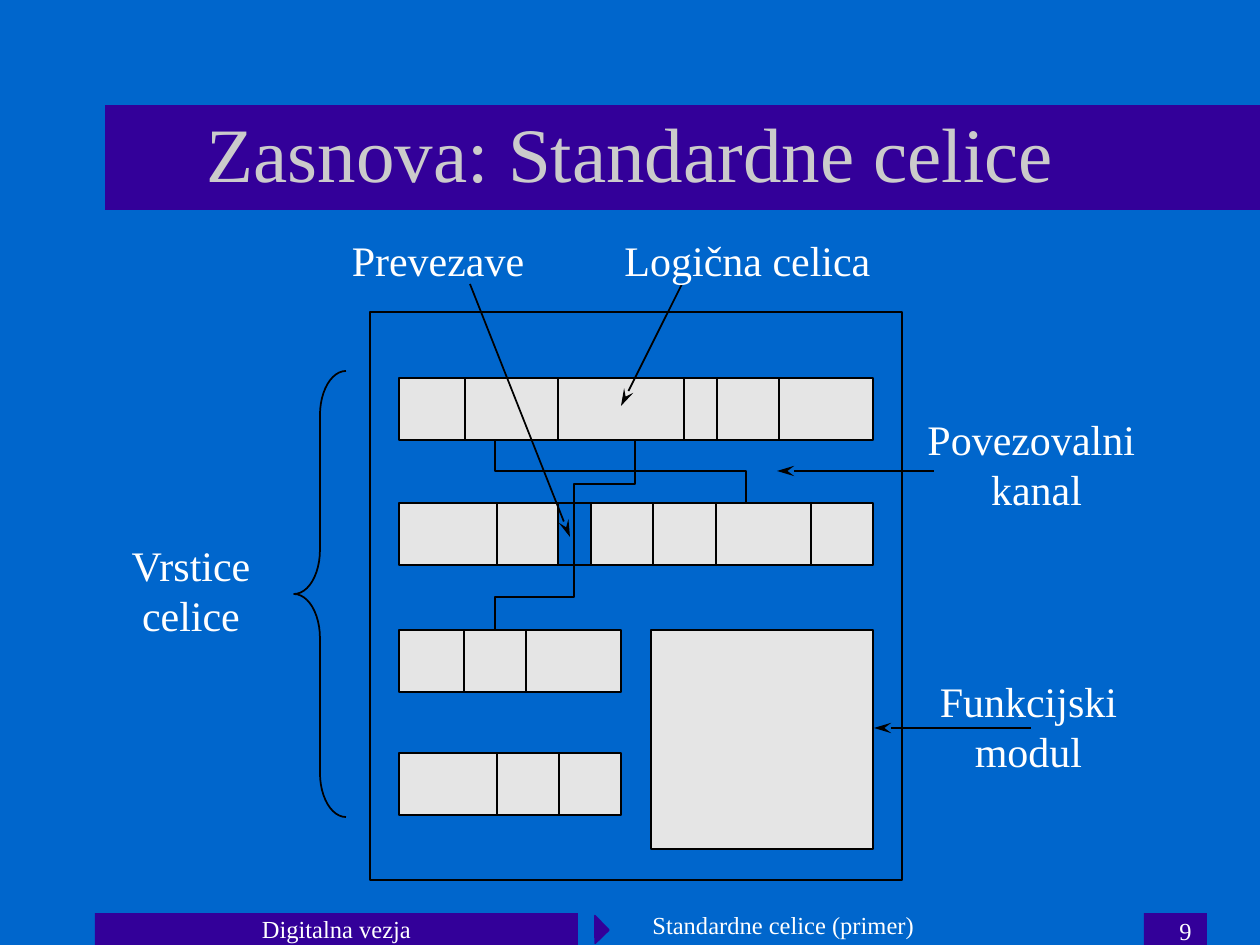
from itertools import pairwise
from pptx import Presentation
from pptx.dml.color import RGBColor
from pptx.enum.shapes import MSO_CONNECTOR as Link, MSO_SHAPE as Kind
from pptx.enum.text import MSO_ANCHOR as Anchor, MSO_AUTO_SIZE as Auto, PP_ALIGN as Align
from pptx.oxml.ns import qn
from pptx.util import Emu, Pt
from lxml.etree import SubElement

SCALE = 914400 / 126
FONT = "Times New Roman"
BACK, BAR, CELL, INK, WHITE, GREY = "0066CC", "330099", "E5E5E5", "000000", "FFFFFF", "CBCBCB"

BARS = [(1144, 913, 63, 32), (95, 913, 483, 32), (105, 105, 1155, 105)]
MARK = (585, 920, 20, 19)
TITLE = ("Zasnova: Standardne celice", (95, 84, 1071, 136))
CHIP = (370, 312, 532, 568)
MODULE = (651, 630, 222, 219)
BRACE = (294, 371, 52, 446)
CELL_H = 62
ROWS = [
    (378, [399, 465, 558, 684, 717, 779, 873]),
    (503, [399, 497, 558, 591, 653, 716, 811, 873]),
    (630, [399, 464, 526, 621]),
    (753, [399, 497, 559, 621]),
]
GAP = (503, 558)
WIRES = [
    [(495, 630), (495, 597), (574, 597), (574, 484), (635, 484), (635, 440)],
    [(495, 440), (495, 471), (746, 471), (746, 503)],
]
ARROWS = [
    ((470, 284), (570, 537)),
    ((682, 284), (621, 406)),
    ((934, 471), (777, 471)),
    ((1031, 728), (874, 728)),
]
LABELS = [
    (["Prevezave"], (339, 228, 198, 63)),
    (["Logična celica"], (612, 228, 271, 63)),
    (["Vrstice", "celice"], (118, 533, 146, 113)),
    (["Povezovalni ", "kanal"], (915, 407, 243, 113)),
    (["Funkcijski", "modul"], (927, 669, 203, 113)),
]
FOOTS = [
    ("9", (942, 910, 262, 32), Align.RIGHT, Anchor.TOP),
    ("Digitalna vezja", (95, 908, 483, 42), Align.CENTER, Anchor.MIDDLE),
    ("Standardne celice (primer)", (640, 904, 483, 42), Align.LEFT, Anchor.MIDDLE),
]


def px(*vals):
    return [Emu(round(v * SCALE)) for v in vals]


def color(code):
    return RGBColor.from_string(code)


def paint(shape, fill=None, line=None):
    shape.shadow.inherit = False
    if fill:
        shape.fill.solid()
        shape.fill.fore_color.rgb = color(fill)
    else:
        shape.fill.background()
    if line:
        shape.line.color.rgb = color(line)
        shape.line.width = Pt(1)
    else:
        shape.line.fill.background()
    return shape


def draw(box, fill=None, line=None, kind=Kind.RECTANGLE):
    return paint(shapes.add_shape(kind, *px(*box)), fill, line)


def write(shape, lines, size=24, ink=WHITE, align=Align.CENTER,
          anchor=Anchor.MIDDLE, wrap=True, fit=Auto.NONE):
    frame = shape.text_frame
    frame.text = "\n".join(lines)
    frame.word_wrap = wrap
    frame.auto_size = fit
    frame.vertical_anchor = anchor
    for para in frame.paragraphs:
        para.alignment = align
        para.font.name = FONT
        para.font.size = Pt(size)
        para.font.color.rgb = color(ink)


def trace(points):
    pen = shapes.build_freeform(*points[0], scale=SCALE)
    pen.add_line_segments(points[1:], close=False)
    paint(pen.convert_to_shape(), line=INK)


def point(start, end):
    arrow = shapes.add_connector(Link.STRAIGHT, *px(*start, *end))
    arrow.line.color.rgb = color(INK)
    arrow.line.width = Pt(1)
    props = arrow._element.spPr
    SubElement(props.find(qn("a:ln")), qn("a:tailEnd"), type="stealth", w="med", len="lg")
    SubElement(props, qn("a:effectLst"))


deck = Presentation()
deck.slide_width, deck.slide_height = px(1260, 945)
slide = deck.slides.add_slide(deck.slide_layouts[5])
shapes = slide.shapes
slide.background.fill.solid()
slide.background.fill.fore_color.rgb = color(BACK)

for bar in BARS:
    draw(bar, BAR)
draw(MARK, BAR, BAR, Kind.RIGHT_TRIANGLE).rotation = 225.8

text, box = TITLE
title = shapes.title
title.left, title.top, title.width, title.height = px(*box)
write(title, [text], size=44, ink=GREY)
shapes._spTree.append(title._element)

draw(CHIP, line=INK)
draw(MODULE, CELL, INK)
for top, edges in ROWS:
    for left, right in pairwise(edges):
        fill = None if (top, left) == GAP else CELL
        draw((left, top, right - left, CELL_H), fill, INK)
for wire in WIRES:
    trace(wire)
for start, end in ARROWS:
    point(start, end)
brace = draw(BRACE, line=INK, kind=Kind.LEFT_BRACE)
brace.adjustments[0] = 0.85

for lines, box in LABELS:
    write(shapes.add_textbox(*px(*box)), lines, wrap=False, fit=Auto.SHAPE_TO_FIT_TEXT)
for text, box, align, anchor in FOOTS:
    write(shapes.add_textbox(*px(*box)), [text], size=14, align=align, anchor=anchor)

deck.save("out.pptx")
